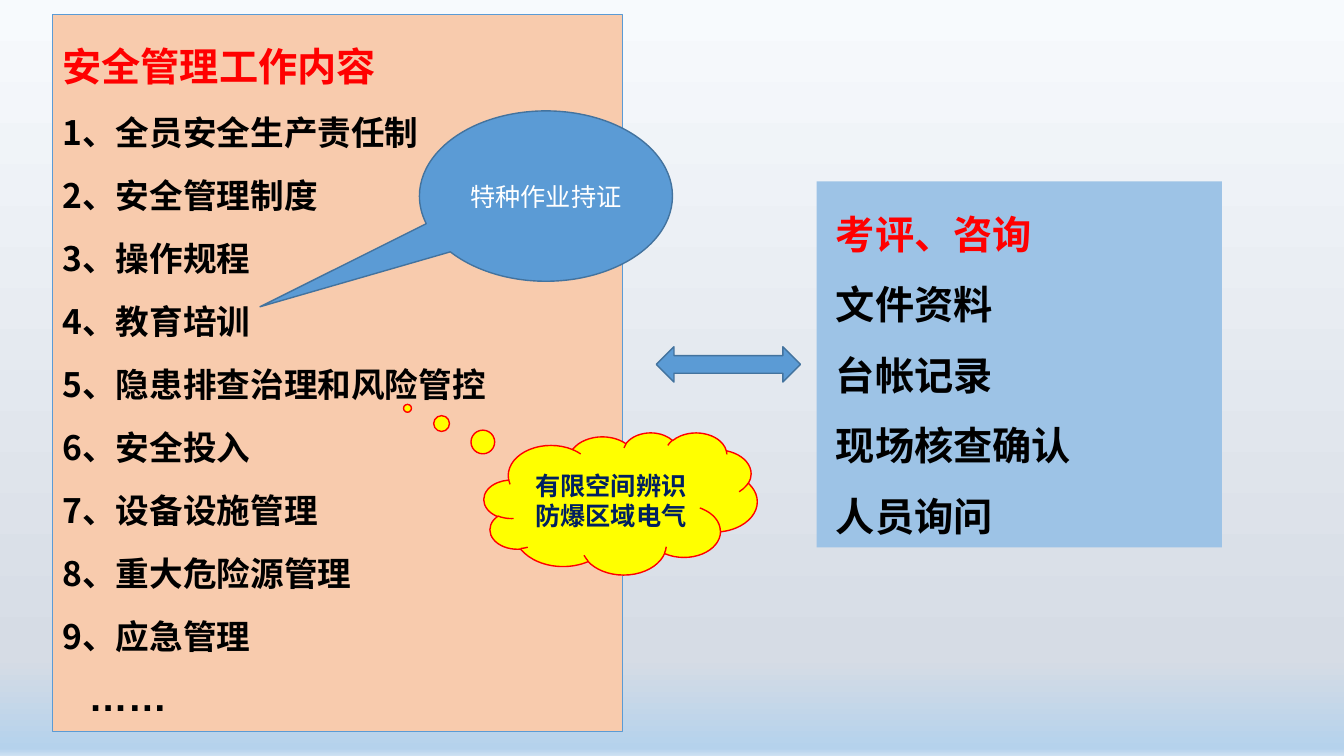
from lxml import etree
from pptx import Presentation
from pptx.dml.color import RGBColor
from pptx.enum.shapes import MSO_SHAPE
from pptx.enum.text import MSO_ANCHOR, MSO_AUTO_SIZE, PP_ALIGN
from pptx.oxml.ns import qn
from pptx.util import Inches, Pt

FONT = "Noto Sans CJK SC"
RED = RGBColor(0xFF, 0x00, 0x00)
BLACK = RGBColor(0x00, 0x00, 0x00)
WHITE = RGBColor(0xFF, 0xFF, 0xFF)
NAVY = RGBColor(0x00, 0x20, 0x60)
YELLOW = RGBColor(0xFF, 0xFF, 0x00)
BLUE = RGBColor(0x5B, 0x9B, 0xD5)
DARK_BLUE = RGBColor(0x43, 0x73, 0x9E)
LIGHT_BLUE = RGBColor(0x9D, 0xC3, 0xE6)
PEACH = RGBColor(0xF8, 0xCB, 0xAD)


def add_box(kind, left, top, width, height, fill, line=None):
    sp = slide.shapes.add_shape(kind, Inches(left), Inches(top), Inches(width), Inches(height))
    sp.shadow.inherit = False
    sp.fill.solid()
    sp.fill.fore_color.rgb = fill
    if line is None:
        sp.line.fill.background()
    else:
        sp.line.color.rgb = line
        sp.line.width = Pt(1)
    return sp


def write_lines(tf, lines, align, spacing):
    """Each line is (text, size, colour, bold, font)."""
    tf.word_wrap = True
    tf.text = "\n".join(line[0] for line in lines)
    for p, (_, size, color, bold, name) in zip(tf.paragraphs, lines):
        p.alignment = align
        p.line_spacing = spacing
        p.space_before = Pt(0)
        r = p.runs[0]
        r.font.size = Pt(size)
        r.font.bold = bold
        r.font.color.rgb = color
        r.font.name = name
        etree.SubElement(r.font._element, qn("a:ea"), typeface=name)


prs = Presentation()
prs.slide_width = Inches(13.33)
prs.slide_height = Inches(7.5)
slide = prs.slides.add_slide(prs.slide_layouts[5])

# Background gradient, top to bottom
fill = slide.background.fill
fill.gradient()
fill.gradient_angle = 270
stops = next(slide._element.iter(qn("a:gsLst")))
for gs in list(stops):
    stops.remove(gs)
for percent, color in [(0, "F7FAFD"), (87, "D6DCE5"), (99, "B5D2EC"), (100, "CEE1F2")]:
    gs = etree.SubElement(stops, qn("a:gs"), pos=str(percent * 1000))
    etree.SubElement(gs, qn("a:srgbClr"), val=color)

# Left panel: management tasks
title = slide.shapes.title
title.left, title.top = Inches(0.52), Inches(0.14)
title.width, title.height = Inches(5.65), Inches(7.12)
title.fill.solid()
title.fill.fore_color.rgb = PEACH
title.line.color.rgb = BLUE
title.line.width = Pt(0.75)
tasks = ["全员安全生产责任制", "安全管理制度", "操作规程", "教育培训", "隐患排查治理和风险管控",
         "安全投入", "设备设施管理", "重大危险源管理", "应急管理"]
lines = [("安全管理工作内容", 28, RED, True, FONT)]
lines += [(f"{n}、{task}", 24, BLACK, True, FONT) for n, task in enumerate(tasks, 1)]
lines.append(("……", 28, BLACK, True, "Arial"))
tf = title.text_frame
tf.auto_size = MSO_AUTO_SIZE.NONE
tf.vertical_anchor = MSO_ANCHOR.MIDDLE
write_lines(tf, lines, PP_ALIGN.LEFT, Pt(45))
tf.paragraphs[-1]._p.get_or_add_pPr().set("marL", str(Inches(0.26)))

# Right panel: assessment methods
panel = add_box(MSO_SHAPE.RECTANGLE, 8.1, 1.8, 4.02, 3.63, LIGHT_BLUE)
methods = ["考评、咨询", "文件资料", "台帐记录", "现场核查确认", "人员询问"]
tf = panel.text_frame
tf.margin_left = Inches(0.19)
tf.vertical_anchor = MSO_ANCHOR.TOP
write_lines(tf, [(m, 28, BLACK, True, FONT) for m in methods], PP_ALIGN.LEFT, 1.5)
tf.paragraphs[0].runs[0].font.color.rgb = RED

# Arrow between the panels
add_box(MSO_SHAPE.LEFT_RIGHT_ARROW, 6.51, 3.44, 1.43, 0.35, BLUE, DARK_BLUE)

# Callouts on single tasks
cloud = add_box(MSO_SHAPE.CLOUD_CALLOUT, 4.8, 4.29, 2.71, 1.41, YELLOW, RED)
bubble = add_box(MSO_SHAPE.OVAL_CALLOUT, 4.16, 1.1, 2.51, 1.69, BLUE, DARK_BLUE)
callouts = [
    (cloud, (-0.78, -0.67), ["有限空间辨识", "防爆区域电气"], NAVY, True),
    (bubble, (-1.13, 0.65), ["特种作业持证"], WHITE, False),
]
for sp, tip, texts, color, bold in callouts:
    sp.adjustments[0], sp.adjustments[1] = tip
    sp.text_frame.vertical_anchor = MSO_ANCHOR.MIDDLE
    write_lines(sp.text_frame, [(t, 18, color, bold, FONT) for t in texts], PP_ALIGN.CENTER, 1.0)

prs.save("out.pptx")
